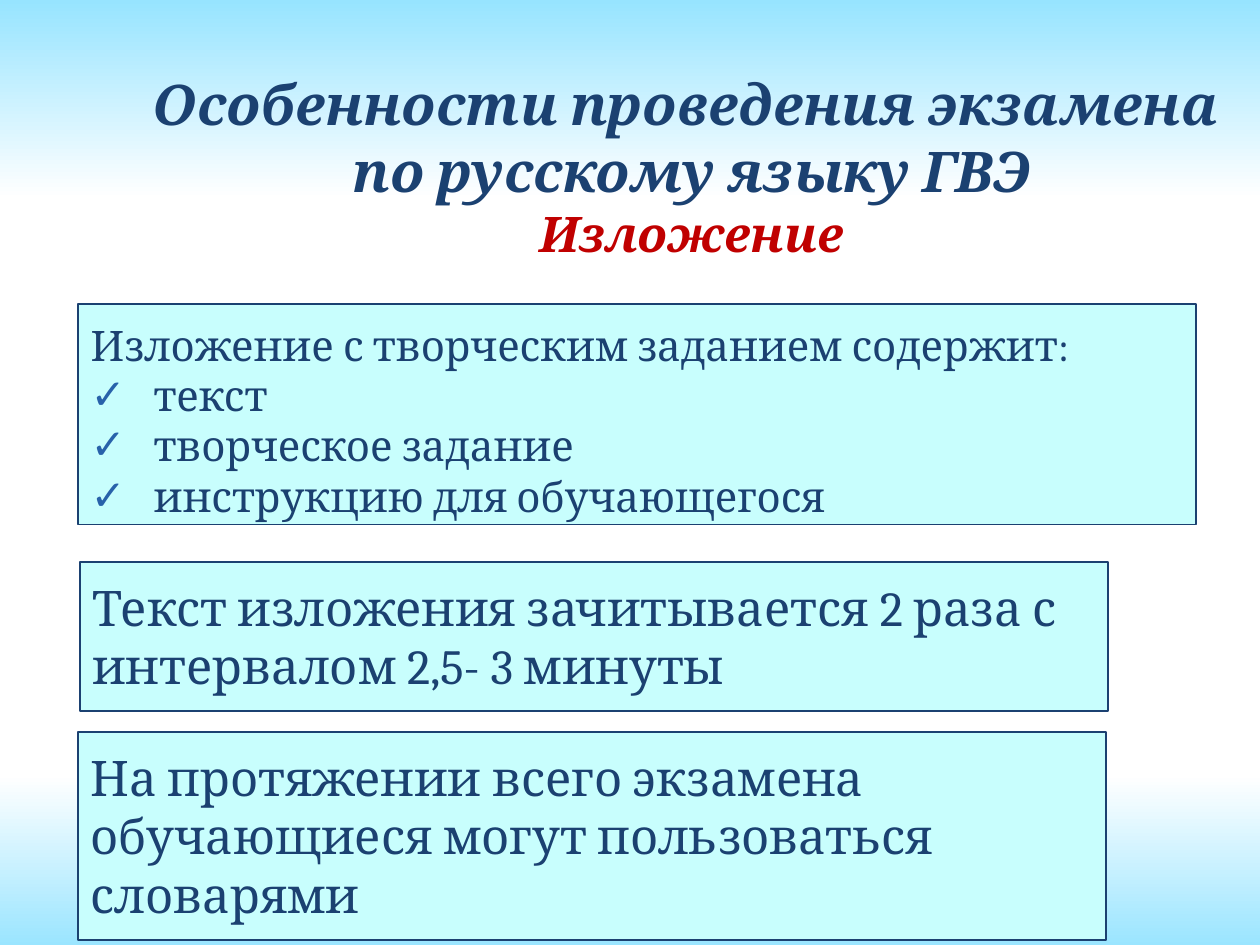
from dataclasses import dataclass

from lxml import etree
from pptx import Presentation
from pptx import util as u
from pptx.dml.color import RGBColor
from pptx.enum import shapes, text
from pptx.oxml.ns import qn

EMU_PER_PX = 914400 / 126


@dataclass(frozen=True)
class Theme:
    font: str = "Cambria"
    ink: str = "1B4171"
    accent: str = "C00000"
    panel: str = "C8FEFD"
    check: str = "2862AA"
    title_size: int = 32
    text_size: int = 28
    list_size: int = 24
    line_width: float = 0.75
    background: tuple = ((0, "97E4FF"), (21, "FFFFFF"), (82, "FFFFFF"), (100, "9BE5FF"))


THEME = Theme()


def px(value):
    return u.Emu(round(value * EMU_PER_PX))


def place(shape, left, top, width, height):
    shape.left, shape.top, shape.width, shape.height = map(px, (left, top, width, height))


def add_element(parent, tag, **attributes):
    return etree.SubElement(parent, qn(tag), **attributes)


def paint_background(slide):
    fill = slide.background.fill
    fill.gradient()
    fill.gradient_angle = 270
    stops = slide.background._cSld.find(".//" + qn("a:gsLst"))
    for stop in list(stops):
        stops.remove(stop)
    for percent, color in THEME.background:
        stop = add_element(stops, "a:gs", pos=str(percent * 1000))
        add_element(stop, "a:srgbClr", val=color)


def write(paragraph, content, size, color=THEME.ink, bold=False, italic=False, align=None):
    """Append one formatted run to the paragraph."""
    paragraph.space_before = u.Pt(0)
    paragraph.alignment = align
    run = paragraph.add_run()
    run.text = content
    font = run.font
    font.name, font.size, font.bold, font.italic = THEME.font, u.Pt(size), bold, italic
    font.color.rgb = RGBColor.from_string(color)


def set_bullet(paragraph, character=None):
    """Give a check-list bullet with hanging indent, or none at all."""
    paragraph.space_before = u.Pt(0)
    properties = paragraph._p.get_or_add_pPr()
    indent = u.Inches(0.5) if character else 0
    properties.set("marL", str(indent))
    properties.set("indent", str(-indent))
    if character:
        color = add_element(properties, "a:buClr")
        add_element(color, "a:srgbClr", val=THEME.check)
        add_element(properties, "a:buChar", char=character)
    else:
        add_element(properties, "a:buNone")


def style_panel(shape):
    shape.fill.solid()
    shape.fill.fore_color.rgb = RGBColor.from_string(THEME.panel)
    shape.line.color.rgb = RGBColor.from_string(THEME.ink)
    shape.line.width = u.Pt(THEME.line_width)
    shape.shadow.inherit = False
    frame = shape.text_frame
    frame.word_wrap = True
    frame.auto_size = text.MSO_AUTO_SIZE.SHAPE_TO_FIT_TEXT
    frame.vertical_anchor = text.MSO_ANCHOR.TOP
    frame.margin_left = frame.margin_right = u.Inches(0.1)
    frame.margin_top = frame.margin_bottom = u.Inches(0.12)


def fill_title(title):
    place(title, 54, 55, 1264, 222)
    frame = title.text_frame
    frame.auto_size = text.MSO_AUTO_SIZE.NONE
    frame.vertical_anchor = text.MSO_ANCHOR.MIDDLE
    lines = [
        ("Особенности проведения экзамена", THEME.title_size, THEME.ink),
        (" по русскому языку ГВЭ", THEME.title_size, THEME.ink),
        (" Изложение", THEME.text_size, THEME.accent),
    ]
    for index, (content, size, color) in enumerate(lines):
        paragraph = frame.add_paragraph() if index else frame.paragraphs[0]
        write(paragraph, content, size, color=color, bold=True, italic=True,
              align=text.PP_ALIGN.CENTER)


def fill_list(body, heading, items):
    place(body, 78, 304, 1118, 233)
    style_panel(body)
    frame = body.text_frame
    set_bullet(frame.paragraphs[0])
    write(frame.paragraphs[0], heading, THEME.list_size)
    for item in items:
        paragraph = frame.add_paragraph()
        set_bullet(paragraph, "✓")
        write(paragraph, item, THEME.list_size)


def add_panel(slide, content, *box):
    panel = slide.shapes.add_shape(shapes.MSO_SHAPE.RECTANGLE, *map(px, box))
    style_panel(panel)
    write(panel.text_frame.paragraphs[0], content, THEME.text_size, align=text.PP_ALIGN.LEFT)


def main():
    presentation = Presentation()
    presentation.slide_width, presentation.slide_height = px(1260), px(945)
    slide = presentation.slides.add_slide(presentation.slide_layouts[1])
    paint_background(slide)
    fill_title(slide.shapes.title)
    fill_list(slide.placeholders[1], "Изложение с творческим заданием содержит:",
              ["текст", "творческое задание", "инструкцию для обучающегося"])
    add_panel(slide, "Текст изложения зачитывается 2 раза с интервалом 2,5- 3 минуты",
              80, 562, 1028, 149)
    add_panel(slide, "На протяжении всего экзамена обучающиеся могут пользоваться словарями",
              78, 732, 1028, 208)
    presentation.save("out.pptx")


if __name__ == "__main__":
    main()
